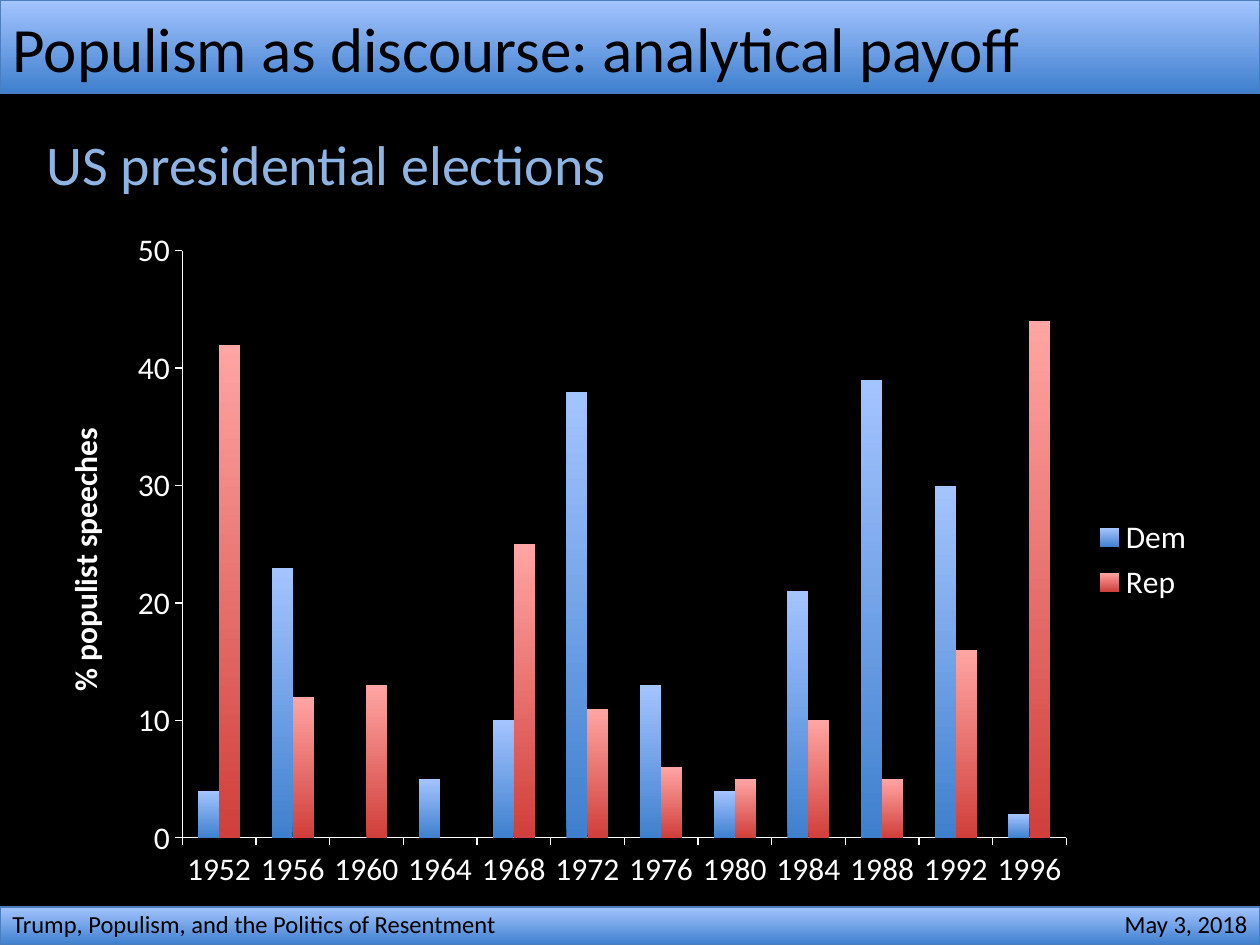
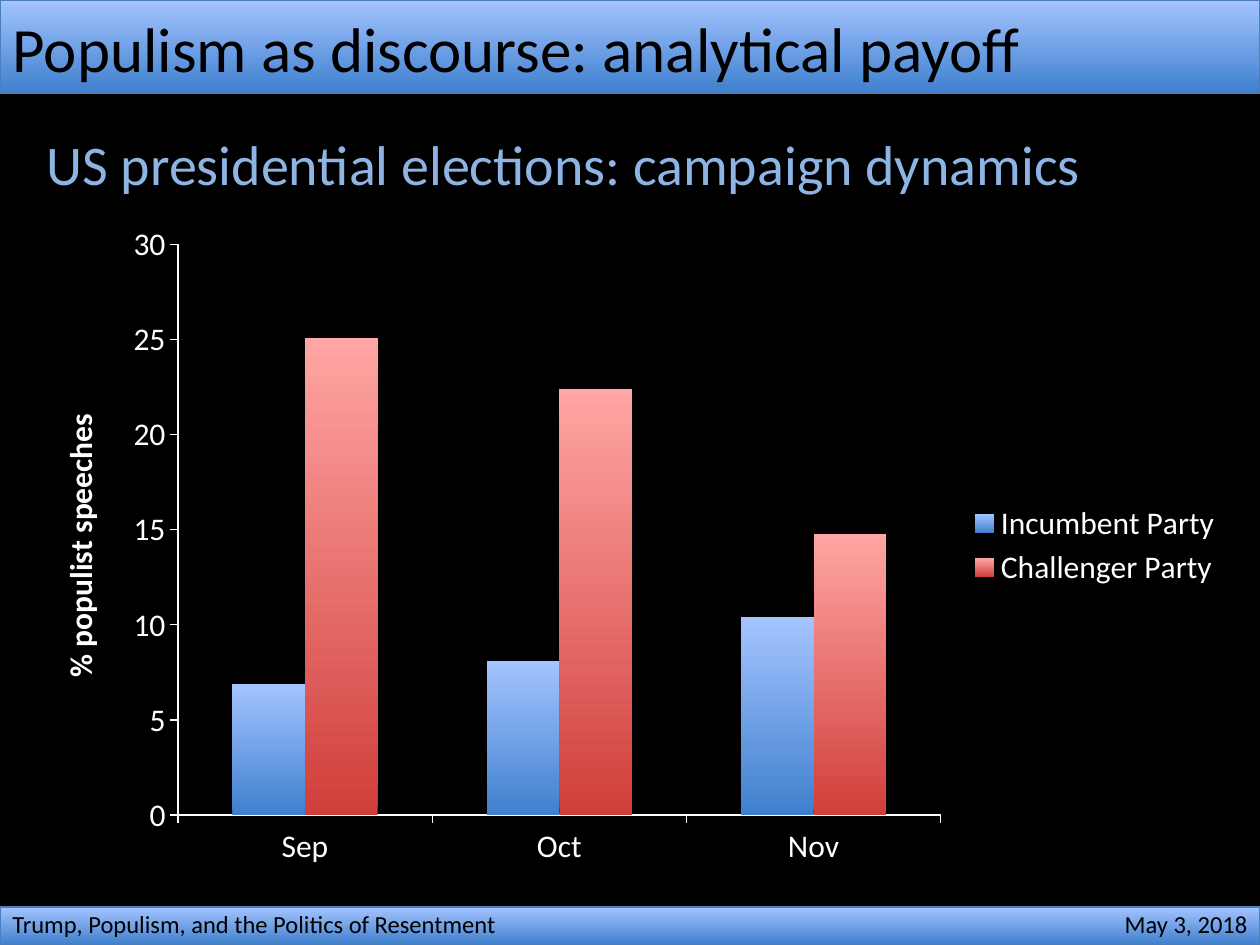
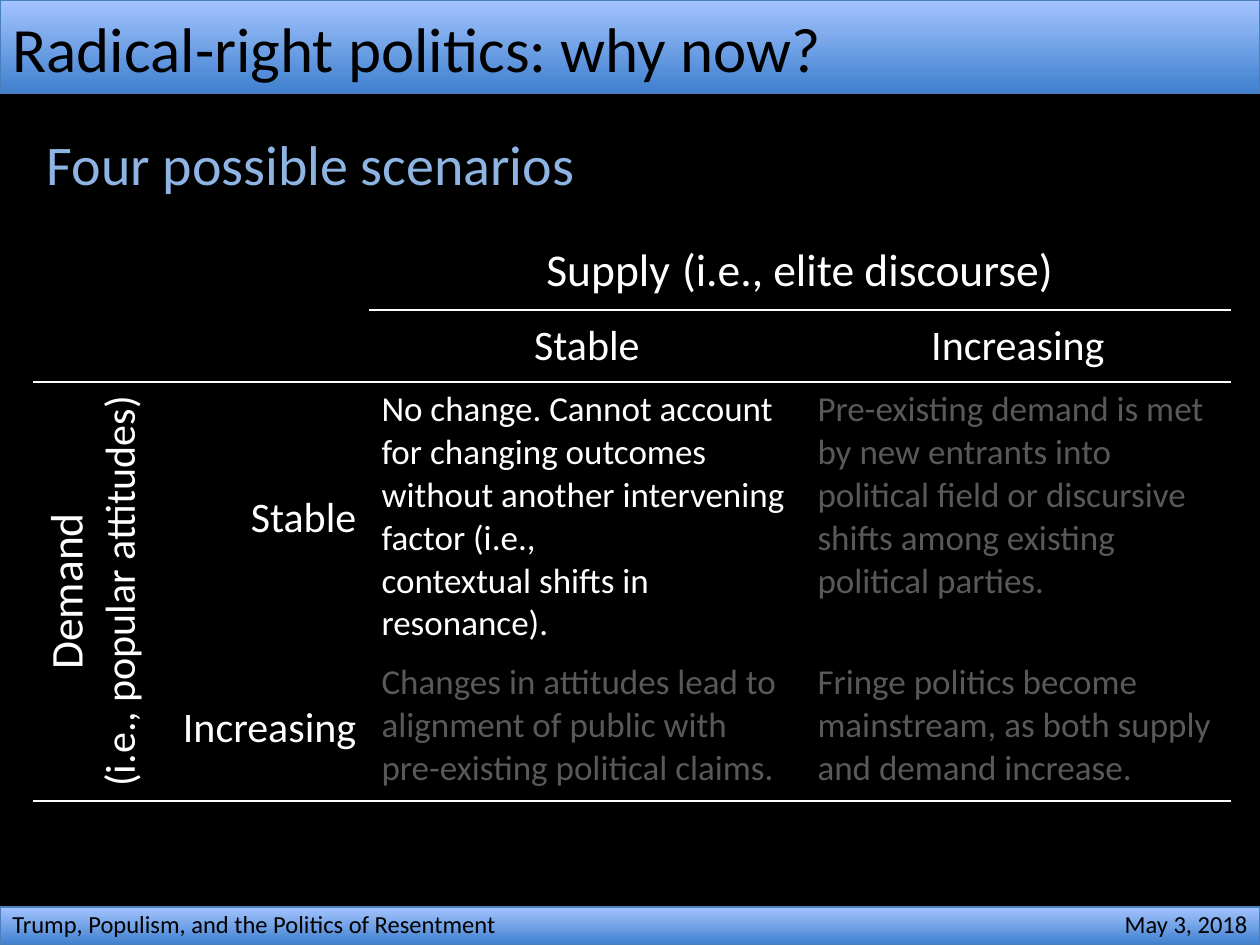
from lxml.etree import SubElement
from pptx import Presentation
from pptx.chart.data import CategoryChartData
from pptx.dml.color import RGBColor
from pptx.enum.chart import XL_CHART_TYPE, XL_LEGEND_POSITION, XL_TICK_MARK
from pptx.enum.shapes import MSO_SHAPE
from pptx.enum.text import MSO_ANCHOR as ANCHOR, MSO_AUTO_SIZE, PP_ALIGN as ALIGN
from pptx.oxml import parse_xml
from pptx.oxml.ns import nsdecls, qn
from pptx.util import Emu, Pt

FONT = "Calibri"
BLACK = RGBColor(0x00, 0x00, 0x00)
WHITE = RGBColor(0xFF, 0xFF, 0xFF)
GREY = RGBColor(0x59, 0x59, 0x59)
PALE_BLUE = RGBColor(0x8E, 0xB4, 0xE3)
BAND_LINE = RGBColor(0x4B, 0x7E, 0xBC)
BLUES = RGBColor(0x3F, 0x80, 0xCE), RGBColor(0xA4, 0xC4, 0xFF)
REDS = RGBColor(0xD0, 0x3F, 0x3B), RGBColor(0xFF, 0xA5, 0xA3)

SLIDE_SIZE = 1260, 945
TITLE_HEIGHT = 94
BANDS = [(0, 907, 1260, 38), (0, 0, 1260, 93)]
FOOTERS = [
    ("Trump, Populism, and the Politics of Resentment", (0, 903, 517, 43), ALIGN.LEFT),
    ("May 3, 2018", (1110, 903, 150, 43), ALIGN.RIGHT),
]
SUBTITLE_BOX = 34, 123, 1226, 755

PAYOFF = "Populism as discourse: analytical payoff"
CHART_SLIDES = [
    {
        "title": PAYOFF,
        "subtitle": "US presidential elections",
        "box": (35, 218, 1172, 684),
        "categories": [str(year) for year in range(1952, 2000, 4)],
        "series": {
            "Dem": [4, 23, 0, 5, 10, 38, 13, 4, 21, 39, 30, 2],
            "Rep": [42, 12, 13, None, 25, 11, 6, 5, 10, 5, 16, 44],
        },
        "maximum": 50,
        "step": 10,
    },
    {
        "title": PAYOFF,
        "subtitle": "US presidential elections: campaign dynamics",
        "box": (30, 212, 1205, 667),
        "categories": ["Sep", "Oct", "Nov"],
        "series": {
            "Incumbent Party": [6.9, 8.1, 10.4],
            "Challenger Party": [25.1, 22.4, 14.8],
        },
        "maximum": 30,
        "step": 5,
    },
]

TABLE_LEFT, TABLE_TOP = 33, 228
COLUMN_WIDTHS = [116, 220, 436, 426]
ROW_HEIGHTS = [82, 72, 273, 146]
MERGES = [((0, 2), (0, 3)), ((2, 0), (3, 0))]
LINES_BELOW = {0: (2, 3), 1: (0, 1, 2, 3), 2: (0,), 3: (0, 1, 2, 3)}
# (row, column): paragraphs, each a list of (text, size) runs
HEADINGS = {
    (0, 2): [[("Supply", 26), (" ", 30), ("(i.e., elite discourse)", 26)]],
    (1, 2): [[("Stable", 24)]],
    (1, 3): [[("Increasing", 24)]],
    (2, 0): [[("Demand", 26)], [("(i.e., popular attitudes)", 24)]],
    (2, 1): [[("Stable", 24)]],
    (3, 1): [[("Increasing", 24)]],
}
SCENARIOS = {
    (2, 2): [
        "No change. Cannot account for changing outcomes without another "
        "intervening factor (i.e.,",
        "contextual shifts in",
        "resonance).",
    ],
    (2, 3): ["Pre-existing demand is met by new entrants into political field or "
             "discursive shifts among existing political parties."],
    (3, 2): ["Changes in attitudes lead to alignment of public with pre-existing "
             "political claims."],
    (3, 3): ["Fringe politics become mainstream, as both supply and demand increase."],
}
ACTIVE_SCENARIO = 2, 2


def px(length):
    return Emu(round(length * 914400 / 126))


def place(shape, box):
    shape.left, shape.top, shape.width, shape.height = map(px, box)


def style_font(font, size, color, bold=False):
    font.name, font.size, font.bold = FONT, Pt(size), bold
    font.color.rgb = color


def add_run(paragraph, text, size, color):
    run = paragraph.add_run()
    run.text = text
    style_font(run.font, size, color)


def fill_gradient(fill, colors):
    """Shade upwards from the first colour to the second."""
    fill.gradient()
    fill.gradient_angle = 90
    for stop, color, position in zip(fill.gradient_stops, colors, (0, 1)):
        stop.color.rgb = color
        stop.position = position


def build_master(master, slide):
    """Give the master its background, bands and footers, made on a slide and moved."""
    master.background.fill.solid()
    master.background.fill.fore_color.rgb = BLACK
    shared = []
    for box in BANDS:
        band = slide.shapes.add_shape(MSO_SHAPE.RECTANGLE, *map(px, box))
        band.shadow.inherit = False
        fill_gradient(band.fill, BLUES)
        band.line.color.rgb = BAND_LINE
        band.line.width = Pt(0.75)
        shared.append(band)
    for text, box, alignment in FOOTERS:
        footer = slide.shapes.add_textbox(*map(px, box))
        footer.text_frame.word_wrap = False
        paragraph = footer.text_frame.paragraphs[0]
        paragraph.alignment = alignment
        add_run(paragraph, text, 14, BLACK)
        shared.append(footer)
    first_placeholder = master.placeholders[0].element
    for number, shape in enumerate(shared, start=101):
        shape.element.xpath(".//p:cNvPr")[0].set("id", str(number))
        first_placeholder.addprevious(shape.element)


def add_titles(slide, title, subtitle):
    place(slide.shapes.title, (0, 0, SLIDE_SIZE[0], TITLE_HEIGHT))
    frame = slide.shapes.title.text_frame
    frame.vertical_anchor = ANCHOR.MIDDLE
    frame.paragraphs[0].alignment = ALIGN.LEFT
    add_run(frame.paragraphs[0], title, 36, BLACK)

    body = slide.placeholders[1]
    place(body, SUBTITLE_BOX)
    body.text_frame.auto_size = MSO_AUTO_SIZE.NONE
    paragraph = body.text_frame.paragraphs[0]
    paragraph.space_before = Pt(0)
    paragraph.space_after = Pt(6)
    properties = paragraph._p.get_or_add_pPr()
    properties.set("marL", "0")
    properties.set("indent", "0")
    SubElement(properties, qn("a:buNone"))
    add_run(paragraph, subtitle, 32, PALE_BLUE)


def add_speech_chart(slide, content):
    data = CategoryChartData()
    data.categories = content["categories"]
    for name, values in content["series"].items():
        data.add_series(name, values)
    chart = slide.shapes.add_chart(
        XL_CHART_TYPE.COLUMN_CLUSTERED, *map(px, content["box"]), data).chart
    chart.has_title = False
    style_font(chart.font, 18, WHITE)

    plot = chart.plots[0]
    plot.gap_width, plot.overlap = 150, 0
    plot.vary_by_categories = False
    for series, colors in zip(plot.series, (BLUES, REDS)):
        fill_gradient(series.format.fill, colors)

    for axis in (chart.category_axis, chart.value_axis):
        axis.has_major_gridlines = False
        axis.major_tick_mark = XL_TICK_MARK.OUTSIDE
        axis.minor_tick_mark = XL_TICK_MARK.NONE
        axis.format.line.color.rgb = WHITE
        axis.format.line.width = Pt(0.75)
        style_font(axis.tick_labels.font, 18, WHITE)
    value_axis = chart.value_axis
    value_axis.minimum_scale = 0
    value_axis.maximum_scale = content["maximum"]
    value_axis.major_unit = content["step"]
    paragraph = value_axis.axis_title.text_frame.paragraphs[0]
    add_run(paragraph, "% populist speeches", 18, WHITE)
    paragraph.runs[0].font.bold = True

    chart.has_legend = True
    chart.legend.position = XL_LEGEND_POSITION.RIGHT
    chart.legend.include_in_layout = False
    style_font(chart.legend.font, 18, WHITE)


def set_borders(cell, row, column):
    ruled = {
        "lnT": column in LINES_BELOW.get(row - 1, ()),
        "lnB": column in LINES_BELOW.get(row, ()),
    }
    for index, edge in enumerate(("lnL", "lnR", "lnT", "lnB")):
        paint = (f'<a:solidFill><a:srgbClr val="{WHITE}"/></a:solidFill>'
                 if ruled.get(edge) else "<a:noFill/>")
        border = parse_xml(f'<a:{edge} {nsdecls("a")} w="12700">{paint}</a:{edge}>')
        cell._tc.get_or_add_tcPr().insert(index, border)


def write_cell(cell, paragraphs, color, alignment):
    frame = cell.text_frame
    for index, runs in enumerate(paragraphs):
        paragraph = frame.add_paragraph() if index else frame.paragraphs[0]
        paragraph.alignment = alignment
        for text, size in runs:
            add_run(paragraph, text, size, color)


def add_scenario_table(slide):
    table = slide.shapes.add_table(
        len(ROW_HEIGHTS), len(COLUMN_WIDTHS), px(TABLE_LEFT), px(TABLE_TOP),
        px(sum(COLUMN_WIDTHS)), px(sum(ROW_HEIGHTS))).table
    table.first_row = table.horz_banding = False
    for column, width in zip(table.columns, COLUMN_WIDTHS):
        column.width = px(width)
    for row, height in zip(table.rows, ROW_HEIGHTS):
        row.height = px(height)
    for row in range(len(ROW_HEIGHTS)):
        for column in range(len(COLUMN_WIDTHS)):
            cell = table.cell(row, column)
            cell.fill.solid()
            cell.fill.fore_color.rgb = BLACK
            set_borders(cell, row, column)
    for first, last in MERGES:
        table.cell(*first).merge(table.cell(*last))

    for position, paragraphs in HEADINGS.items():
        cell = table.cell(*position)
        cell.vertical_anchor = ANCHOR.MIDDLE
        alignment = ALIGN.RIGHT if position[1] == 1 else ALIGN.CENTER
        write_cell(cell, paragraphs, WHITE, alignment)
    table.cell(2, 0)._tc.get_or_add_tcPr().set("vert", "vert270")
    for position, texts in SCENARIOS.items():
        color = WHITE if position == ACTIVE_SCENARIO else GREY
        write_cell(table.cell(*position), [[(text, 20)] for text in texts],
                   color, ALIGN.LEFT)


def main():
    presentation = Presentation()
    presentation.slide_width, presentation.slide_height = map(px, SLIDE_SIZE)
    layout = presentation.slide_layouts[1]
    for content in CHART_SLIDES:
        slide = presentation.slides.add_slide(layout)
        add_titles(slide, content["title"], content["subtitle"])
        add_speech_chart(slide, content)
    slide = presentation.slides.add_slide(layout)
    add_titles(slide, "Radical-right politics: why now?", "Four possible scenarios")
    add_scenario_table(slide)
    build_master(presentation.slide_master, slide)
    presentation.save("out.pptx")


if __name__ == "__main__":
    main()
